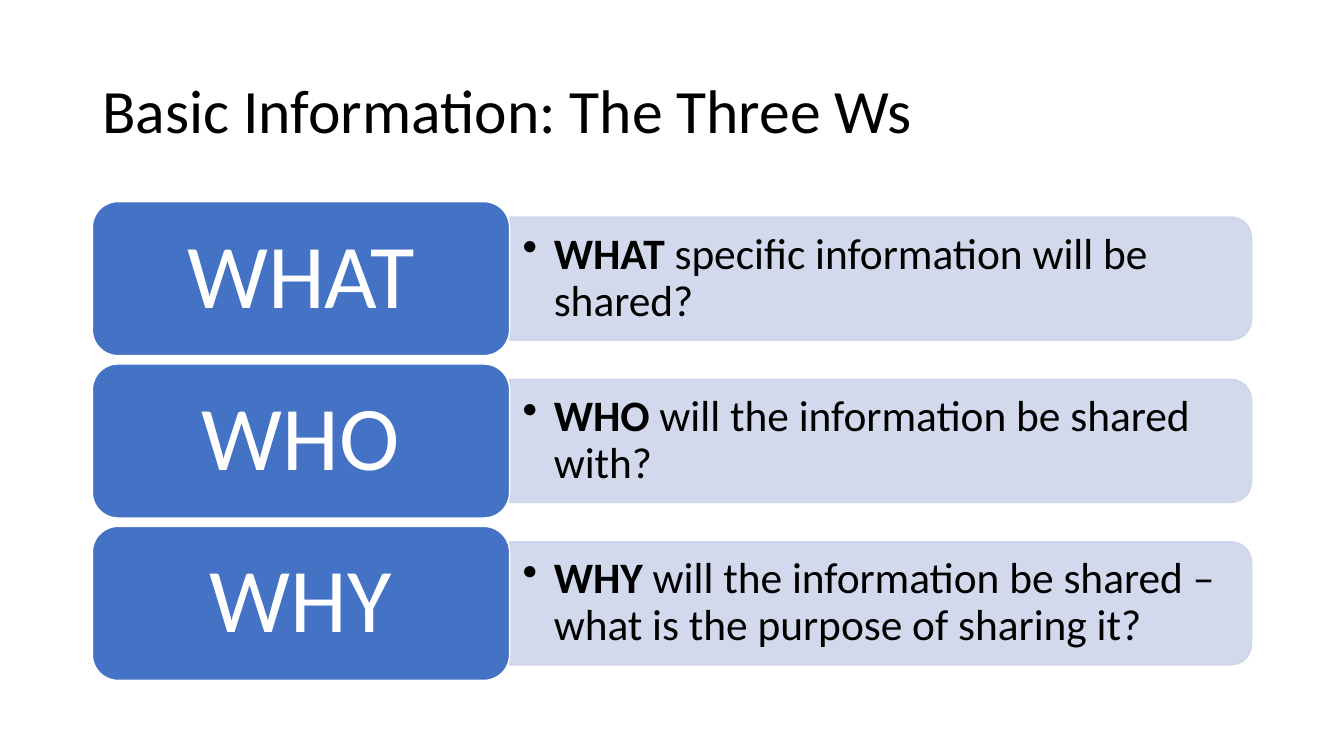
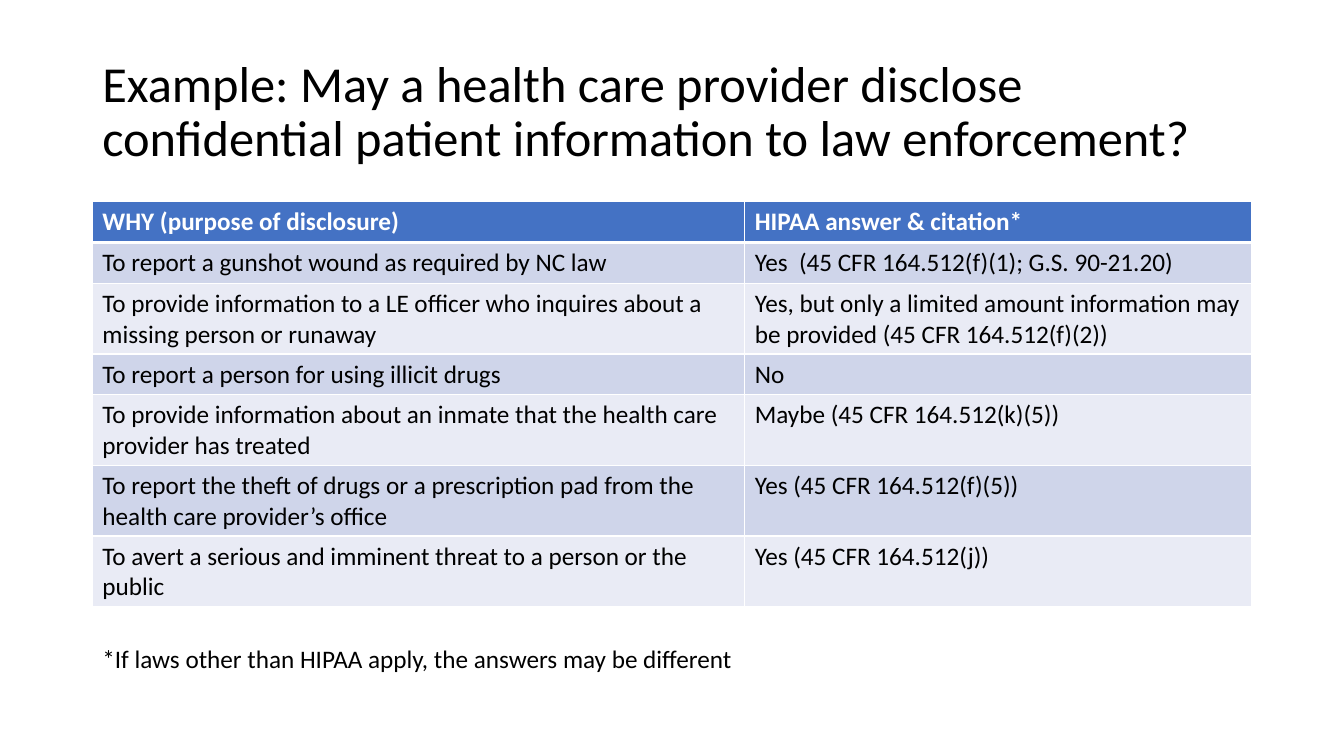
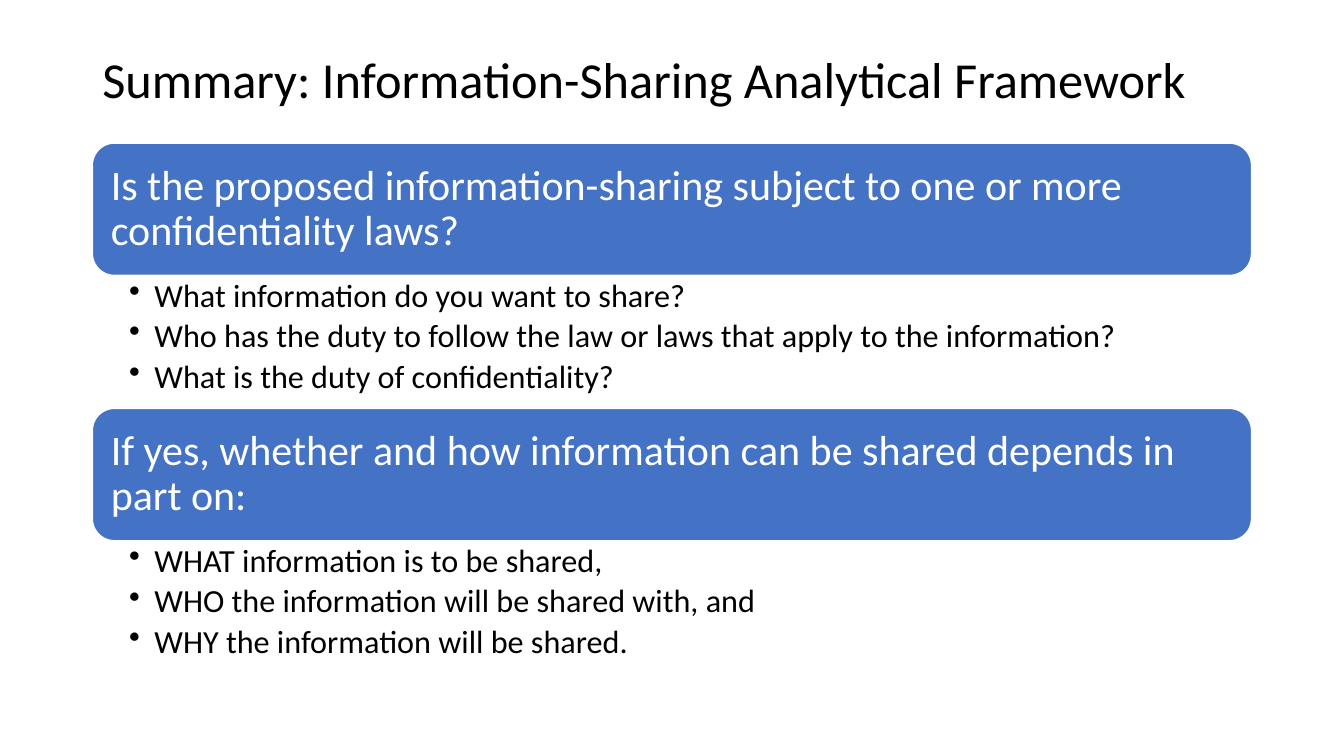
from dataclasses import dataclass
from typing import Any, NamedTuple

from lxml import etree
from pptx import Presentation
from pptx.dml.color import RGBColor
from pptx.enum.shapes import MSO_SHAPE
from pptx.enum.text import MSO_ANCHOR, PP_ALIGN
from pptx.oxml.ns import qn
from pptx.util import Pt

ROUND = MSO_SHAPE.ROUNDED_RECTANGLE
TAB = MSO_SHAPE.ROUND_2_SAME_RECTANGLE
TOP, MIDDLE = MSO_ANCHOR.TOP, MSO_ANCHOR.MIDDLE
LEFT, CENTER = PP_ALIGN.LEFT, PP_ALIGN.CENTER


@dataclass(frozen=True)
class Theme:
    font: str = "Calibri"
    blue: str = "4472C4"
    tint: str = "CFD5EA"
    pale: str = "E9EBF5"
    white: str = "FFFFFF"
    black: str = "000000"
    large: float = 44
    title: float = 36
    badge: float = 65
    ask: float = 31
    head: float = 30
    item: float = 23
    body: float = 18


T = Theme()


@dataclass(frozen=True)
class Style:
    size: float
    color: str = T.black
    bold: bool = False
    align: Any = LEFT
    line: float = 0.9
    after: float = 0
    hang: float = 0


class Box(NamedTuple):
    x: float
    y: float
    w: float
    h: float


class Run(NamedTuple):
    text: str
    bold: bool = False


class Card(NamedTuple):
    word: str
    rest: str


class Part(NamedTuple):
    head: str
    items: tuple[str, ...]


CARDS = (
    Card("WHAT", " specific information will be shared?"),
    Card("WHO", " will the information be shared with?"),
    Card("WHY", " will the information be shared – what is the purpose of sharing it?"),
)
ROWS = (
    ("WHY (purpose of disclosure)", "HIPAA answer & citation*"),
    ("To report a gunshot wound as required by NC law",
     "Yes  (45 CFR 164.512(f)(1); G.S. 90-21.20)"),
    ("To provide information to a LE officer who inquires about a missing person or runaway",
     "Yes, but only a limited amount information may be provided (45 CFR 164.512(f)(2))"),
    ("To report a person for using illicit drugs", "No"),
    ("To provide information about an inmate that the health care provider has treated",
     "Maybe (45 CFR 164.512(k)(5))"),
    ("To report the theft of drugs or a prescription pad from the health care provider’s office",
     "Yes (45 CFR 164.512(f)(5))"),
    ("To avert a serious and imminent threat to a person or the public",
     "Yes (45 CFR 164.512(j))"),
)
PARTS = (
    Part("Is the proposed information-sharing subject to one or more confidentiality laws?",
         ("What information do you want to share?",
          "Who has the duty to follow the law or laws that apply to the information?",
          "What is the duty of confidentiality?")),
    Part("If yes, whether and how information can be shared depends in part on:",
         ("WHAT information is to be shared,",
          "WHO the information will be shared with, and",
          "WHY the information will be shared.")),
)

EDGE, WIDE = 66, 828
PAD = (7.2, 3.6, 7.2, 3.6)


def assign(item: Any, values: dict[str, Any]) -> None:
    for name, value in values.items():
        setattr(item, name, value)


def rgb(color: str) -> RGBColor:
    return RGBColor.from_string(color)


def write(frame: Any, paras: list[list[Run]], style: Style) -> None:
    for num, runs in enumerate(paras):
        para = frame.add_paragraph() if num else frame.paragraphs[0]
        assign(para, {"alignment": style.align, "line_spacing": style.line,
                      "space_after": Pt(style.after)})
        if style.hang:
            props = para._p.get_or_add_pPr()
            props.set("marL", str(Pt(style.hang)))
            props.set("indent", str(-Pt(style.hang)))
            etree.SubElement(props, qn("a:buChar")).set("char", "•")
        for part in runs:
            run = para.add_run()
            run.text = part.text
            assign(run.font, {"name": T.font, "size": Pt(style.size),
                              "bold": style.bold or part.bold})
            run.font.color.rgb = rgb(style.color)


def layout(frame: Any, pad: tuple[float, ...], anchor: Any, wrap: bool = True) -> None:
    left, top, right, bottom = map(Pt, pad)
    assign(frame, {"margin_left": left, "margin_top": top, "margin_right": right,
                   "margin_bottom": bottom, "vertical_anchor": anchor, "word_wrap": wrap})


def label(slide: Any, box: Box, paras: list[list[Run]], style: Style,
          pad: tuple[float, ...] = PAD, anchor: Any = MIDDLE, wrap: bool = True) -> None:
    frame = slide.shapes.add_textbox(*map(Pt, box)).text_frame
    layout(frame, pad, anchor, wrap)
    write(frame, paras, style)


def block(slide: Any, kind: Any, box: Box, fill: str, line: str) -> Any:
    shape = slide.shapes.add_shape(kind, *map(Pt, box))
    shape.shadow.inherit = False
    shape.fill.solid()
    shape.fill.fore_color.rgb = rgb(fill)
    shape.line.color.rgb = rgb(line)
    shape.line.width = Pt(1)
    return shape


def panel(slide: Any, box: Box, text: str, style: Style, pad: tuple[float, ...]) -> None:
    """Draw a blue rounded box with its text."""
    shape = block(slide, ROUND, box, T.blue, T.white)
    layout(shape.text_frame, pad, MIDDLE)
    write(shape.text_frame, [[Run(text)]], style)


def strip(slide: Any, box: Box) -> None:
    """Draw a see-through bar, rounded at its right end, as a turned tab."""
    turned = Box(box.x + (box.w - box.h) / 2, box.y + (box.h - box.w) / 2, box.h, box.w)
    shape = block(slide, TAB, turned, T.tint, T.tint)
    shape.rotation = 90
    for color in shape._element.spPr.iter(qn("a:srgbClr")):
        etree.SubElement(color, qn("a:alpha")).set("val", "90000")


def border(cell: Any, widths: dict[str, float]) -> None:
    props = cell._tc.get_or_add_tcPr()
    for num, (side, width) in enumerate(widths.items()):
        line = etree.Element(qn(f"a:ln{side}"), w=str(Pt(width)))
        fill = etree.SubElement(line, qn("a:solidFill"))
        etree.SubElement(fill, qn("a:srgbClr")).set("val", T.white)
        props.insert(num, line)


def start(deck: Any, title: str, size: float, high: float = 104.4) -> Any:
    """Add a blank slide with its title."""
    slide = deck.slides.add_slide(deck.slide_layouts[6])
    label(slide, Box(EDGE, 28.75, WIDE, high), [[Run(title)]], Style(size))
    return slide


def basics(deck: Any) -> None:
    slide = start(deck, "Basic Information: The Three Ws", T.large)
    high, gap, side, inset = 110, 6, 298, 11
    badge = Style(T.badge, T.white, align=CENTER)
    ask = Style(T.ask, hang=22.3)
    for num, card in enumerate(CARDS):
        top = 144 + num * (high + gap)
        bar = Box(EDGE + side, top + inset, WIDE - side, high - 2 * inset)
        strip(slide, bar)
        label(slide, Box(bar.x, bar.y + 4, bar.w - 4, bar.h - 8),
              [[Run(card.word, True), Run(card.rest)]], ask, (9.3, 4.6, 9.3, 4.6))
        panel(slide, Box(EDGE, top, side, high), card.word, badge, (19, 10, 19, 10))


def answers(deck: Any) -> None:
    slide = start(deck, "Example: May a health care provider disclose confidential "
                  "patient information to law enforcement?", T.title)
    high = 29.2
    box = Box(EDGE, 144, WIDE, high * len(ROWS))
    grid = slide.shapes.add_table(len(ROWS), 2, *map(Pt, box)).table
    grid.horz_banding = False
    for col, width in zip(grid.columns, (466, 362)):
        col.width = Pt(width)
    head = Style(T.body, T.white, bold=True, line=1.0)
    body = Style(T.body, line=1.0)
    for num, texts in enumerate(ROWS):
        grid.rows[num].height = Pt(high)
        fill = (T.pale, T.tint)[num % 2] if num else T.blue
        for cell, text in zip(grid.rows[num].cells, texts):
            cell.fill.solid()
            cell.fill.fore_color.rgb = rgb(fill)
            border(cell, {"L": 1, "R": 1, "T": 3 if num == 1 else 1, "B": 1 if num else 3})
            write(cell.text_frame, [[Run(text)]], body if num else head)
    label(slide, Box(EDGE, 456, 469.5, 29),
          [[Run("*If laws other than HIPAA apply, the answers may be different")]],
          body, anchor=TOP, wrap=False)


def summary(deck: Any) -> None:
    slide = start(deck, "Summary: Information-Sharing Analytical Framework", T.title, 60)
    high, deep = 94.5, 95
    head = Style(T.head, T.white)
    item = Style(T.item, after=4, hang=18)
    for num, part in enumerate(PARTS):
        top = 102.25 + num * (high + deep)
        panel(slide, Box(EDGE, top, WIDE, high), part.head, head, (8.6,) * 4)
        label(slide, Box(EDGE, top + high, WIDE, deep), [[Run(text)] for text in part.items],
              item, (26.3, 2.9, 16.4, 2.9), TOP)


def main() -> None:
    deck = Presentation()
    assign(deck, {"slide_width": Pt(960), "slide_height": Pt(540)})
    for build in (basics, answers, summary):
        build(deck)
    deck.save("out.pptx")


if __name__ == "__main__":
    main()
